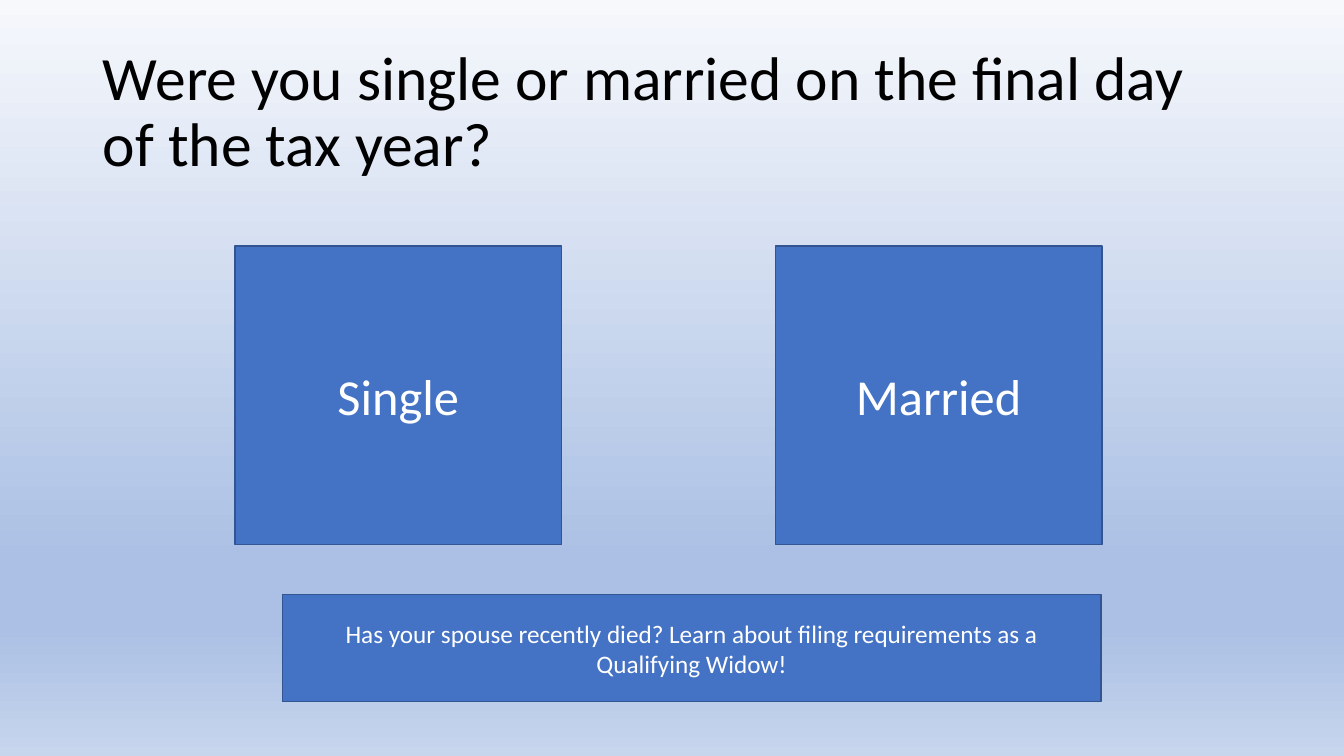
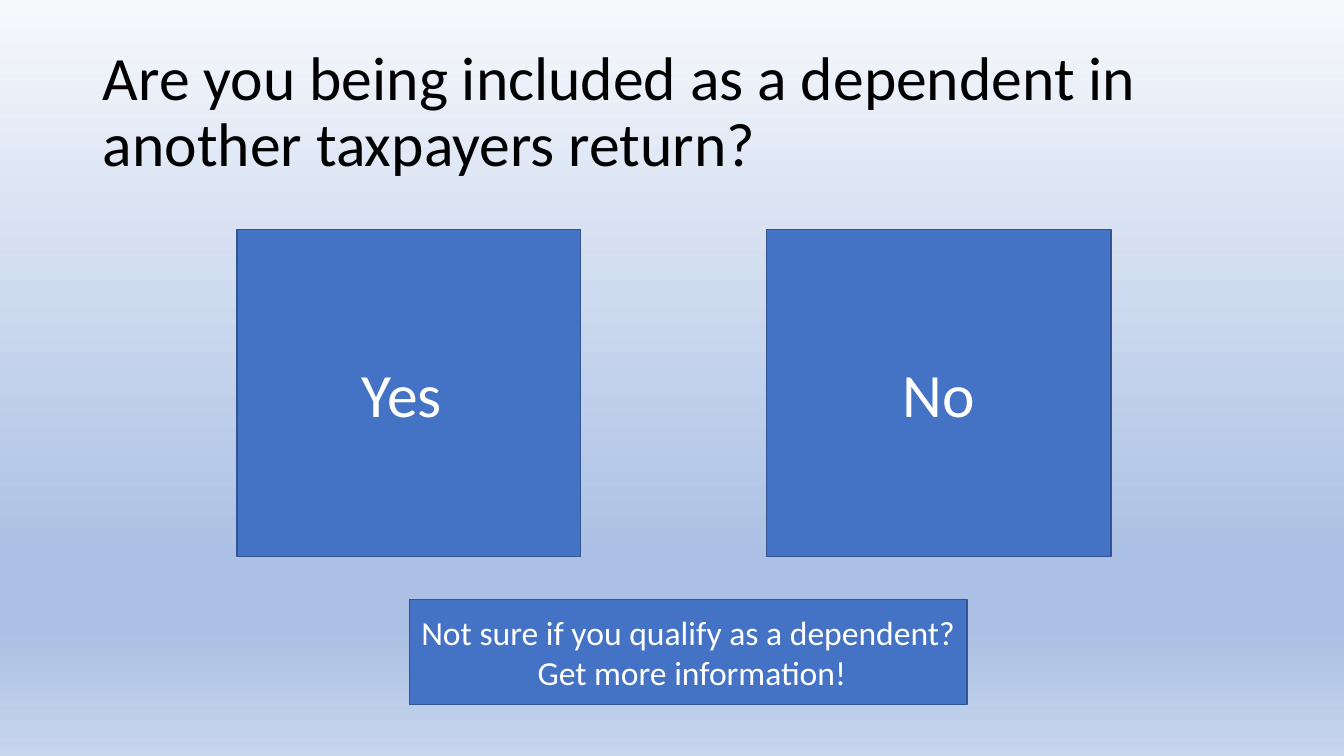
from lxml import etree
from pptx import Presentation
from pptx.dml.color import RGBColor
from pptx.enum.shapes import MSO_SHAPE
from pptx.enum.text import MSO_ANCHOR, MSO_AUTO_SIZE, PP_ALIGN
from pptx.oxml.ns import qn
from pptx.util import Inches, Pt

BUTTON = MSO_SHAPE.ACTION_BUTTON_CUSTOM
MIDDLE = MSO_ANCHOR.MIDDLE
NO_FIT = MSO_AUTO_SIZE.NONE
LEFT, CENTER = PP_ALIGN.LEFT, PP_ALIGN.CENTER

FONT = "Calibri"
BLACK, WHITE = "000000", "FFFFFF"
BLUE, BLUE_EDGE = "4472C4", "325491"
BACKGROUND = [(0, "F6F8FC"), (74, "ABC0E4"), (83, "ABC0E4"), (100, "C7D5ED")]
TITLE_BOX = (0.92, 0.4, 11.5, 1.45)

# Each question: title, then buttons as (text, size, (left, top, width, height))
QUESTIONS = [
    ("Were you single or married on the final day of the tax year?", [
        ("Single", 36, (2.33, 2.44, 3.24, 2.96)),
        ("Married", 36, (7.69, 2.44, 3.24, 2.96)),
        ("Has your spouse recently died? Learn about filing requirements as a Qualifying Widow!",
         18, (2.8, 5.9, 8.12, 1.06)),
    ]),
    ("Are you being included as a dependent in another taxpayers return?", [
        ("Yes ", 44, (2.35, 2.28, 3.41, 3.24)),
        ("Not sure if you qualify as a dependent?  Get more information!",
         24, (4.06, 5.95, 5.53, 1.04)),
        ("No", 44, (7.6, 2.28, 3.42, 3.24)),
    ]),
]


def rgb(color):
    return RGBColor.from_string(color)


def write(shape, text, size, color, align):
    tf = shape.text_frame
    tf.text = text
    tf.word_wrap = True
    tf.auto_size = NO_FIT
    tf.vertical_anchor = MIDDLE
    p = tf.paragraphs[0]
    p.alignment = align
    font = p.runs[0].font
    font.name, font.size, font.color.rgb = FONT, Pt(size), rgb(color)
    return p


prs = Presentation()
prs.slide_width, prs.slide_height = Inches(13.33), Inches(7.5)

# Shared background: vertical gradient on the master
master = prs.slide_master
fill = master.background.fill
fill.gradient()
fill.gradient_angle = 270
stops = master.element.find(".//" + qn("a:gsLst"))
for stop in list(stops):
    stops.remove(stop)
for position, color in BACKGROUND:
    stop = etree.SubElement(stops, qn("a:gs"), pos=str(position * 1000))
    etree.SubElement(stop, qn("a:srgbClr"), val=color)

# Shared title position
layout = prs.slide_layouts.get_by_name("Title Only")
title = layout.placeholders[0]
title.left, title.top, title.width, title.height = map(Inches, TITLE_BOX)

# One slide per question
for question, buttons in QUESTIONS:
    s = prs.slides.add_slide(layout)
    p = write(s.shapes.title, question, 44, BLACK, LEFT)
    p.line_spacing = 0.9

    for text, size, box in buttons:
        sp = s.shapes.add_shape(BUTTON, *map(Inches, box))
        sp.shadow.inherit = False
        sp.fill.solid()
        sp.fill.fore_color.rgb = rgb(BLUE)
        sp.line.color.rgb = rgb(BLUE_EDGE)
        sp.line.width = Pt(1)
        write(sp, text, size, WHITE, CENTER)

prs.save("out.pptx")
